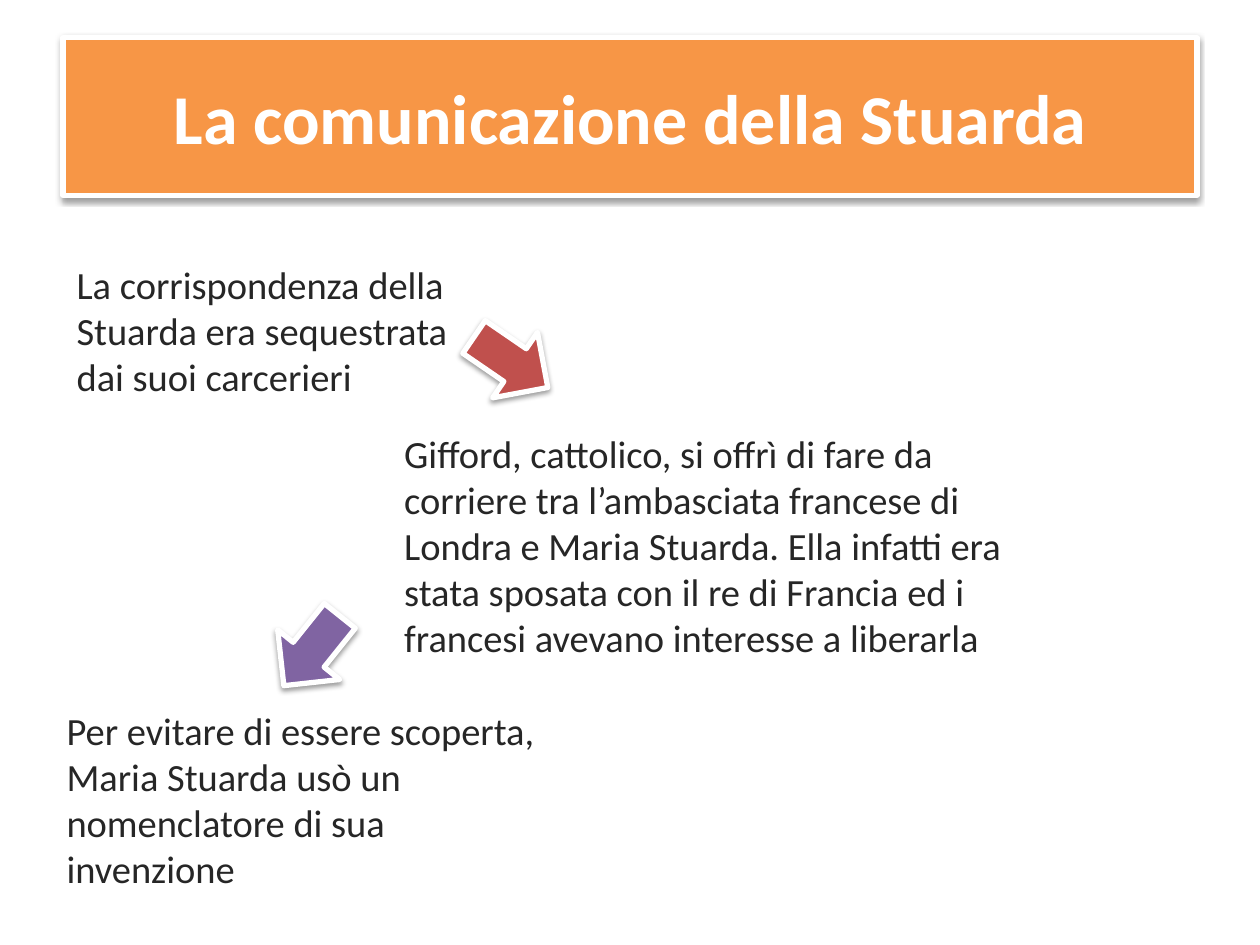
from lxml import etree
from pptx import Presentation
from pptx.dml.color import RGBColor
from pptx.enum.shapes import MSO_SHAPE as Shape
from pptx.enum.text import MSO_ANCHOR as Anchor, MSO_AUTO_SIZE as AutoSize, PP_ALIGN as Align
from pptx.oxml import parse_xml
from pptx.oxml.ns import nsdecls, qn
from pptx.util import Inches, Pt

COLORS = {
    "orange": "F79646",
    "red": "C0504D",
    "purple": "8064A2",
    "white": "FFFFFF",
    "black": "000000",
    "text": "262626",
}

# Text and box (left, top, width, height in inches) of each step
STEPS = [
    ("La corrispondenza della Stuarda era sequestrata dai suoi carcerieri",
     (0.51, 2.02, 3.23, 1.45)),
    ("Gifford, cattolico, si offrì di fare da corriere tra l’ambasciata francese di "
     "Londra e Maria Stuarda. Ella infatti era stata sposata con il re di Francia "
     "ed i francesi avevano interesse a liberarla",
     (3.11, 3.36, 5.35, 1.78)),
    ("Per evitare di essere scoperta, Maria Stuarda usò un nomenclatore di sua invenzione",
     (0.43, 5.56, 4.09, 1.45)),
]

# Box, rotation and color of the arrow after each of the first two steps
ARROWS = [
    ((3.74, 2.52, 0.63, 0.71), 304.4, "red"),
    ((2.16, 4.81, 0.63, 0.71), 38.7, "purple"),
]


def rgb(name):
    return RGBColor.from_string(COLORS[name])


def to_inches(box):
    return [Inches(value) for value in box]


def style_raised(shape, color):
    """Solid fill, white border and a soft shadow below."""
    shape.fill.solid()
    shape.fill.fore_color.rgb = rgb(color)
    shape.line.color.rgb = rgb("white")
    shape.line.width = Pt(3)
    shape.shadow.inherit = False
    effects = shape._element.spPr.find(qn("a:effectLst"))
    effects.append(parse_xml(
        f'<a:outerShdw {nsdecls("a")} blurRad="{Pt(3.1)}" dist="{Pt(1.6)}" '
        f'dir="5400000" rotWithShape="0"><a:srgbClr val="{COLORS["black"]}">'
        '<a:alpha val="38000"/></a:srgbClr></a:outerShdw>'))


def write_text(shape, text, size, color, align, anchor, bold=False):
    frame = shape.text_frame
    frame.text = text
    frame.word_wrap = True
    frame.auto_size = AutoSize.NONE
    frame.vertical_anchor = anchor
    paragraph = frame.paragraphs[0]
    paragraph.alignment = align
    font = paragraph.runs[0].font
    font.name = "Calibri"
    font.size = Pt(size)
    font.bold = bold
    font.color.rgb = rgb(color)


def place_title(slide, text, box):
    title = slide.shapes.title
    title.left, title.top, title.width, title.height = to_inches(box)
    style_raised(title, "orange")
    write_text(title, text, 40, "white", Align.CENTER, Anchor.MIDDLE, bold=True)


def add_step(slide, text, box):
    step = slide.shapes.add_textbox(*to_inches(box))
    write_text(step, text, 22, "text", Align.LEFT, Anchor.TOP)


def add_arrow(slide, box, rotation, color):
    arrow = slide.shapes.add_shape(Shape.DOWN_ARROW, *to_inches(box))
    arrow.rotation = rotation
    style_raised(arrow, color)


def main():
    presentation = Presentation()
    presentation.slide_width = Inches(10)
    presentation.slide_height = Inches(7.5)
    slide = presentation.slides.add_slide(presentation.slide_layouts[5])

    # Title banner
    place_title(slide, "La comunicazione della Stuarda", (0.5, 0.3, 9, 1.25))

    # Story steps, joined by arrows
    for text, box in STEPS:
        add_step(slide, text, box)
    for box, rotation, color in ARROWS:
        add_arrow(slide, box, rotation, color)

    presentation.save("out.pptx")


if __name__ == "__main__":
    main()
